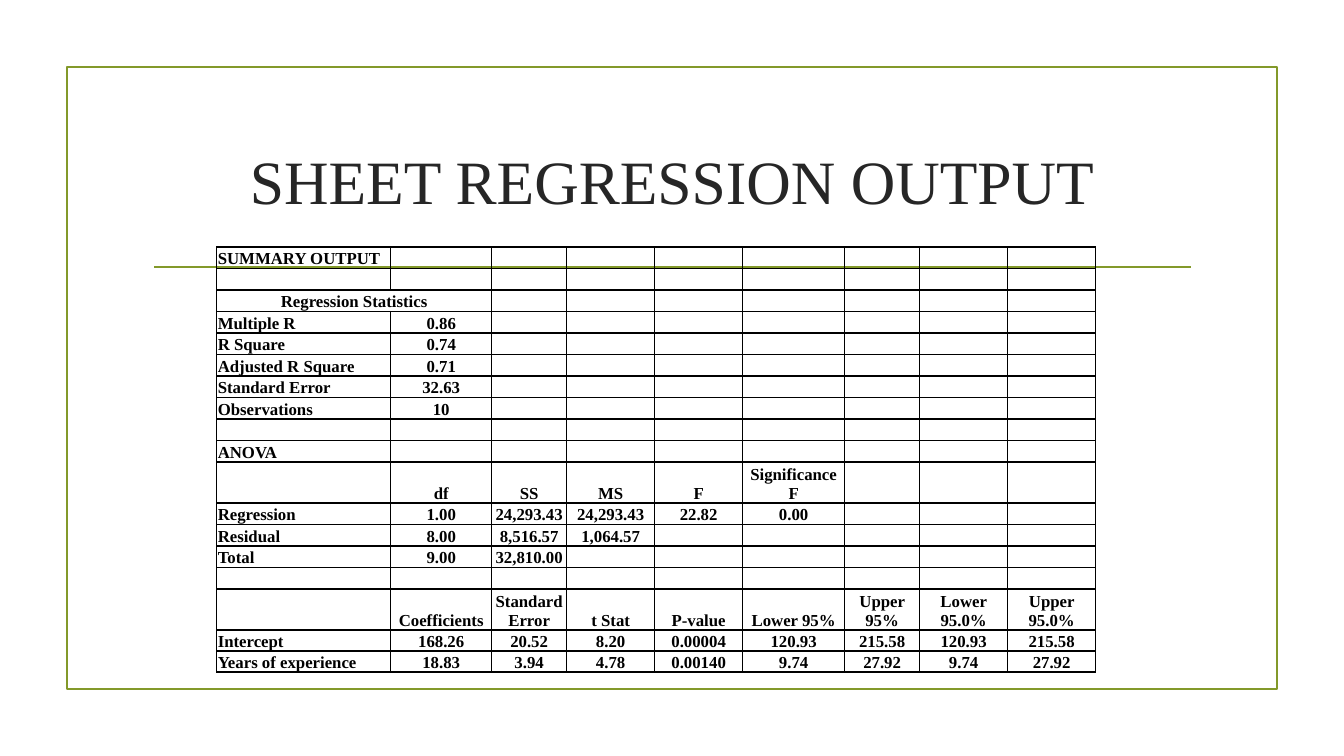
from lxml.etree import SubElement
from pptx import Presentation
from pptx.dml.color import RGBColor
from pptx.enum.shapes import MSO_CONNECTOR, MSO_SHAPE
from pptx.enum.text import MSO_ANCHOR, PP_ALIGN
from pptx.oxml.ns import qn
from pptx.util import Inches, Pt

COLORS = {"olive": "83992A", "title": "262626", "ink": "000000"}
FONT = "Times New Roman"

deck = Presentation()
deck.slide_width = Inches(13.33)
deck.slide_height = Inches(7.5)
column = deck.slide_width / 100
row = deck.slide_height / 100
page = deck.slides.add_slide(deck.slide_layouts[5])


def place(left, top, width, height):
    return int(left * column), int(top * row), int(width * column), int(height * row)


def write(frame, text, size=12, color="ink", bold=False, align=PP_ALIGN.LEFT):
    para = frame.paragraphs[0]
    para.alignment = align
    if not text:
        SubElement(para._p, qn("a:endParaRPr"), sz=str(size * 100))
        return
    span = para.add_run()
    span.text = text
    span.font.name = FONT
    span.font.size = Pt(size)
    span.font.bold = bold
    span.font.color.rgb = RGBColor.from_string(COLORS[color])


border = page.shapes.add_shape(MSO_SHAPE.RECTANGLE, *place(5, 8.9, 90, 82.3))
border.shadow.inherit = False
border.fill.background()

rule = page.shapes.add_connector(
    MSO_CONNECTOR.STRAIGHT,
    int(11.48 * column), int(35.33 * row), int(88.6 * column), int(35.33 * row),
)
SubElement(rule._element.spPr, qn("a:effectLst"))

for outline in (border, rule):
    outline.line.color.rgb = RGBColor.from_string(COLORS["olive"])
    outline.line.width = Pt(1.25)

title = page.shapes.title
title.left, title.top, title.width, title.height = place(10.65, 14.27, 78.77, 19.07)
title.text_frame.word_wrap = True
title.text_frame.vertical_anchor = MSO_ANCHOR.MIDDLE
write(title.text_frame, "SHEET REGRESSION OUTPUT", size=44, color="title", align=PP_ALIGN.CENTER)

output_rows = [
    ["SUMMARY OUTPUT"],
    [],
    ["Regression Statistics"],
    ["Multiple R", "0.86"],
    ["R Square", "0.74"],
    ["Adjusted R Square", "0.71"],
    ["Standard Error", "32.63"],
    ["Observations", "10"],
    [],
    ["ANOVA"],
    ["", "df", "SS", "MS", "F", "Significance F"],
    ["Regression", "1.00", "24,293.43", "24,293.43", "22.82", "0.00"],
    ["Residual", "8.00", "8,516.57", "1,064.57"],
    ["Total", "9.00", "32,810.00"],
    [],
    ["", "Coefficients", "Standard Error", "t Stat", "P-value", "Lower 95%",
     "Upper 95%", "Lower 95.0%", "Upper 95.0%"],
    ["Intercept", "168.26", "20.52", "8.20", "0.00004", "120.93", "215.58", "120.93", "215.58"],
    ["Years of experience", "18.83", "3.94", "4.78", "0.00140", "9.74", "27.92", "9.74", "27.92"],
]
column_shares = [12.95, 7.51, 5.58, 6.55, 6.55, 7.59, 5.58, 6.55, 6.55]
statistics_row = 2
header_rows = (10, 15)
row_shares = [5.42 if index in header_rows else 2.78 for index in range(len(output_rows))]

table = page.shapes.add_table(
    len(output_rows), len(column_shares),
    *place(16.13, 32.67, sum(column_shares), sum(row_shares)),
).table
table.first_row = False
table.horz_banding = False
for table_column, share in zip(table.columns, column_shares):
    table_column.width = int(share * column)
for table_row, share in zip(table.rows, row_shares):
    table_row.height = int(share * row)

for row_index, values in enumerate(output_rows):
    for column_index in range(len(column_shares)):
        cell = table.cell(row_index, column_index)
        cell.margin_left = cell.margin_right = cell.margin_top = Inches(0.01)
        cell.margin_bottom = 0
        cell.vertical_anchor = MSO_ANCHOR.BOTTOM
        centred = column_index > 0 or row_index == statistics_row
        write(
            cell.text_frame,
            values[column_index] if column_index < len(values) else "",
            bold=True,
            align=PP_ALIGN.CENTER if centred else PP_ALIGN.LEFT,
        )
        properties = cell._tc.get_or_add_tcPr()
        for side in ("lnL", "lnR", "lnT", "lnB"):
            edge = SubElement(properties, qn(f"a:{side}"), w=str(Pt(1)))
            paint = SubElement(edge, qn("a:solidFill"))
            SubElement(paint, qn("a:srgbClr"), val=COLORS["ink"])
        cell.fill.background()

table.cell(statistics_row, 0).merge(table.cell(statistics_row, 1))

deck.save("out.pptx")
